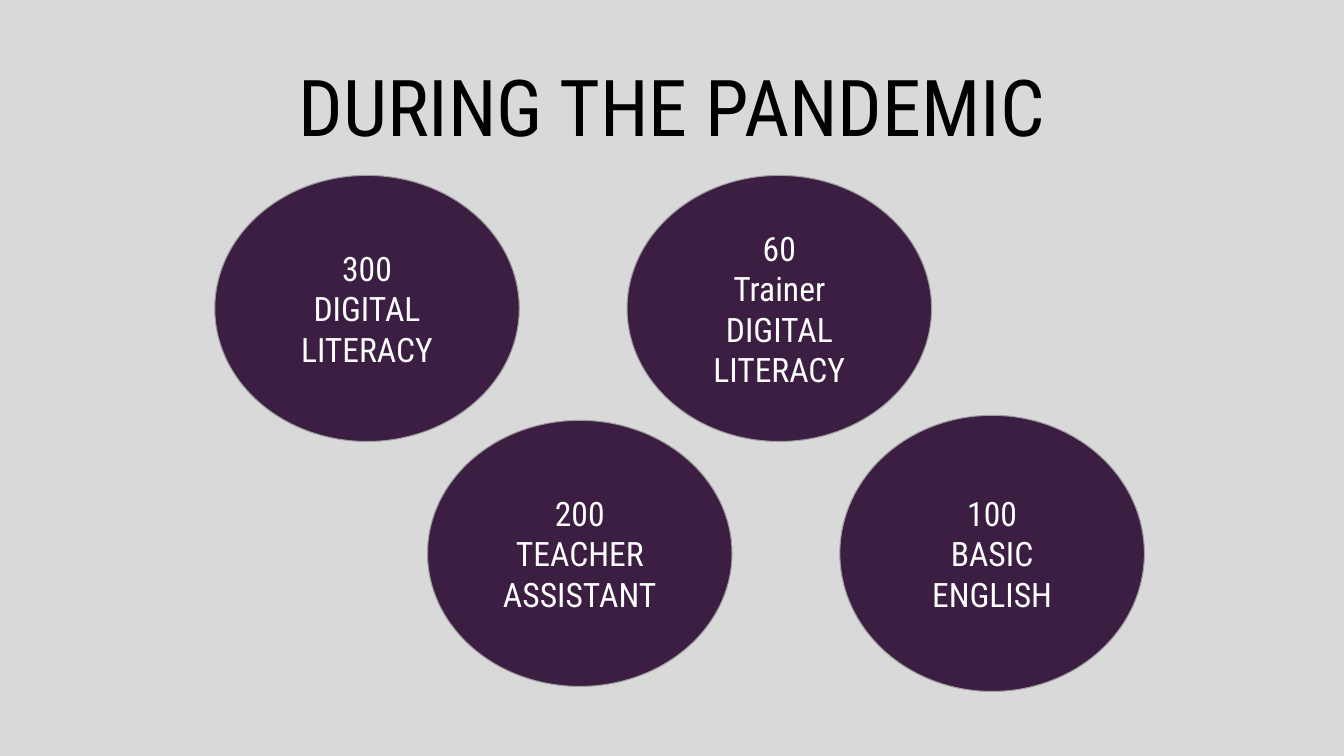
"""Build the slide on programme numbers during the pandemic."""
from dataclasses import dataclass

from pptx import Presentation
from pptx.dml.color import RGBColor
from pptx.enum.shapes import MSO_SHAPE as Preset
from pptx.enum.text import MSO_ANCHOR as Anchor, PP_ALIGN as Align
from pptx.util import Inches, Pt


@dataclass(frozen=True)
class Theme:
    """Colours, font and type sizes of the slide."""
    background: str = "D9D9D9"
    plum: str = "3B1E42"
    outline: str = "9E9E9E"
    dark: str = "000000"
    light: str = "FFFFFF"
    font: str = "Roboto Condensed"
    title_size: int = 56
    body_size: int = 24


def write(shape, lines, *, font, size, color, inset):
    """Fill a shape with centred paragraphs, one for each line."""
    frame = shape.text_frame
    frame.word_wrap = True
    frame.vertical_anchor = Anchor.MIDDLE
    frame.margin_left = frame.margin_right = Inches(inset)
    frame.margin_top = frame.margin_bottom = Inches(inset)
    for index, line in enumerate(lines):
        para = frame.add_paragraph() if index else frame.paragraphs[0]
        para.alignment = Align.CENTER
        span = para.add_run()
        span.text = line
        span.font.name = font
        span.font.size = Pt(size)
        span.font.color.rgb = RGBColor.from_string(color)


class SlideBuilder:
    """Draw themed elements, placed in percent of the slide's size."""

    def __init__(self, deck, theme):
        """Add a title-only page with the theme's background."""
        self.theme = theme
        self.width, self.height = deck.slide_width, deck.slide_height
        self.page = deck.slides.add_slide(deck.slide_layouts[5])
        fill = self.page.background.fill
        fill.solid()
        fill.fore_color.rgb = RGBColor.from_string(theme.background)

    def across(self, share):
        """Turn a percentage of the slide's width into a length."""
        return round(self.width * share / 100)

    def down(self, share):
        """Turn a percentage of the slide's height into a length."""
        return round(self.height * share / 100)

    def title(self, text, top, height):
        """Place the title across the full width."""
        box = self.page.shapes.title
        box.left, box.top = 0, self.down(top)
        box.width, box.height = self.width, self.down(height)
        write(box, [text], font=self.theme.font, size=self.theme.title_size,
              color=self.theme.dark, inset=0.05)

    def bubble(self, lines, center_x, center_y, width, height):
        """Draw a labelled ellipse around a centre point."""
        oval = self.page.shapes.add_shape(
            Preset.OVAL,
            self.across(center_x - width / 2), self.down(center_y - height / 2),
            self.across(width), self.down(height))
        oval.shadow.inherit = False
        oval.fill.solid()
        oval.fill.fore_color.rgb = RGBColor.from_string(self.theme.plum)
        oval.line.color.rgb = RGBColor.from_string(self.theme.outline)
        oval.line.width = Pt(0.75)
        write(oval, lines, font=self.theme.font, size=self.theme.body_size,
              color=self.theme.light, inset=0.13)


def main():
    """Compose the slide and save it."""
    deck = Presentation()
    deck.slide_width, deck.slide_height = Inches(13.33), Inches(7.5)
    slide = SlideBuilder(deck, Theme())
    slide.title("DURING THE PANDEMIC", top=4.53, height=18.67)

    column_step, bubble_width, bubble_height = 30.68, 22.66, 35.2
    rows = [
        (27.31, 40.8, [(["300", "DIGITAL LITERACY"], bubble_height),
                       (["60", "Trainer", "DIGITAL LITERACY"], bubble_height)]),
        (43.14, 73.2, [(["200", "TEACHER ASSISTANT"], bubble_height),
                       (["100", "BASIC ENGLISH"], 36.53)]),
    ]
    for first_x, center_y, bubbles in rows:
        for column, (lines, height) in enumerate(bubbles):
            slide.bubble(lines, first_x + column * column_step, center_y,
                         bubble_width, height)
    deck.save("out.pptx")


if __name__ == "__main__":
    main()
